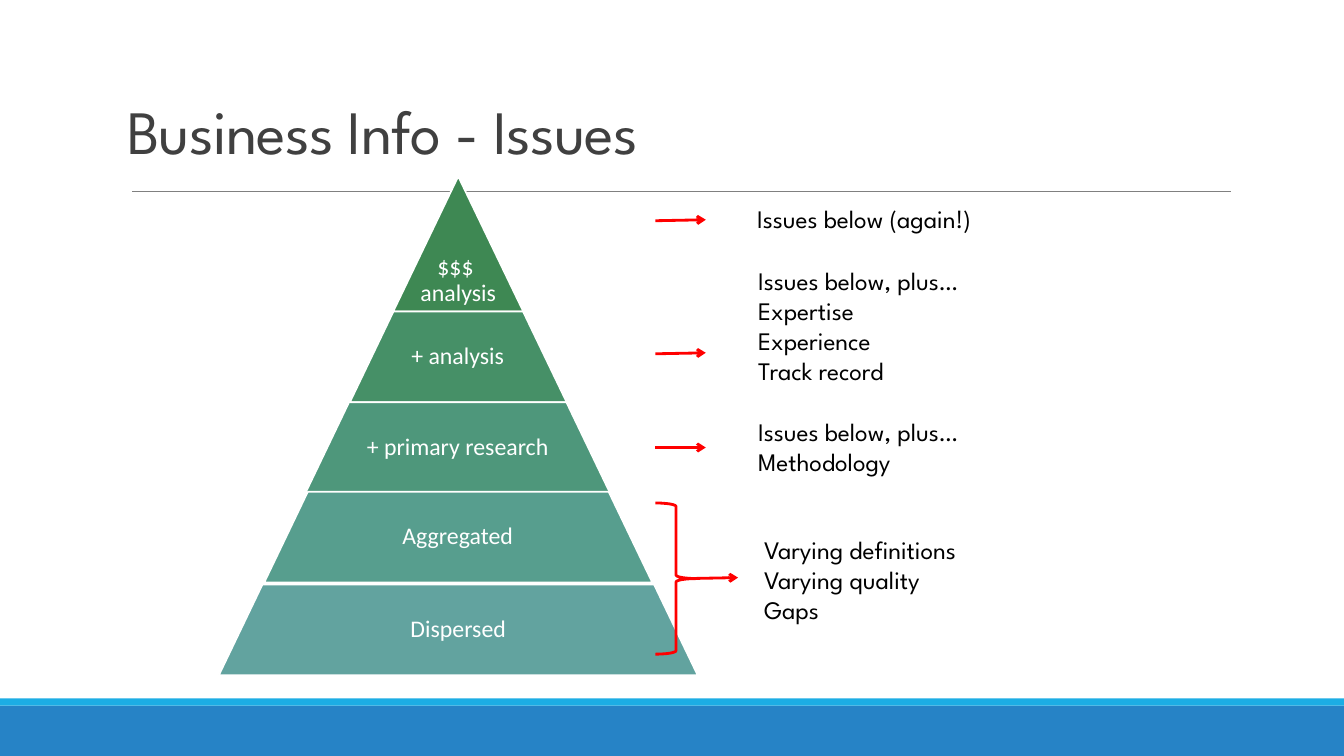
from lxml import etree
from pptx import Presentation
from pptx.dml.color import RGBColor
from pptx.enum.shapes import MSO_CONNECTOR, MSO_SHAPE as SHAPE
from pptx.enum.text import MSO_ANCHOR as ANCHOR, PP_ALIGN as ALIGN
from pptx.oxml.ns import qn
from pptx.util import Emu, Pt

PX = 9144  # 100 px to the inch
COLORS = {
    "bar": "2683C6", "strip": "1CADE4", "rule": "808080", "title": "404040",
    "white": "FFFFFF", "black": "000000", "red": "FF0000",
}
HEAD_FONT, TIER_FONT = "League Spartan", "Calibri"
CENTER = 454

# label, top, width, height, label width, adjustment, fill
TIERS = [
    ("$$$ \nanalysis", 175, 129, 134, 129, 0.5, "3E8853"),
    ("+ analysis", 309, 215, 90, 140, 0.48, "469067"),
    ("+ primary research", 399, 302, 90, 196, 0.48, "4E977B"),
    ("Aggregated", 488, 385, 90, 250, 0.48, "579E8E"),
    ("Dispersed", 580, 475, 90, 309, 0.48, "62A39F"),
]
# text box (left, top, width, height), arrow (x1, y1, x2, y2), lines
ISSUES = [
    ((741, 197, 308, 40), (650, 219, 700, 218), ["Issues below (again!)"]),
    ((742, 258, 350, 131), (650, 351, 700, 350),
     ["Issues below, plus…", "Expertise", "Experience", "Track record"]),
    ((742, 408, 350, 71), (650, 444, 700, 444),
     ["Issues below, plus…", "Methodology"]),
    ((748, 525, 360, 101), (683, 574, 732, 573),
     ["Varying definitions", "Varying quality", "Gaps"]),
]


def px(*lengths):
    return [Emu(n * PX) for n in lengths]


def add_line(x1, y1, x2, y2, color, width, arrow=False):
    cxn = s.shapes.add_connector(MSO_CONNECTOR.STRAIGHT, *px(x1, y1, x2, y2))
    cxn.line.color.rgb = RGBColor.from_string(COLORS[color])
    cxn.line.width = Pt(width)
    if arrow:
        etree.SubElement(cxn.line._get_or_add_ln(), qn("a:tailEnd"), type="arrow")
    etree.SubElement(cxn._element.spPr, qn("a:effectLst"))


prs = Presentation()
prs.slide_width, prs.slide_height = px(1333, 750)
s = prs.slides.add_slide(prs.slide_layouts[5])

# Title
title = s.shapes.title
title.left, title.top, title.width, title.height = px(116, 83, 908, 88)
tf = title.text_frame
tf.word_wrap = True
tf.vertical_anchor = ANCHOR.BOTTOM
p = tf.paragraphs[0]
p.alignment = ALIGN.LEFT
p.line_spacing = 0.85
r = p.add_run()
r.text = "Business Info - Issues"
r.font.name, r.font.size = HEAD_FONT, Pt(44)
r.font.color.rgb = RGBColor.from_string(COLORS["title"])
r.font._element.set("spc", "-50")

# Footer bars and title rule
for color, top, height in [("bar", 700, 50), ("strip", 693, 7)]:
    sp = s.shapes.add_shape(SHAPE.RECTANGLE, *px(0, top, 1333, height))
    sp.shadow.inherit = False
    sp.fill.solid()
    sp.fill.fore_color.rgb = RGBColor.from_string(COLORS[color])
    sp.line.fill.background()
add_line(131, 190, 1221, 190, "rule", 0.5)

# Pyramid
for label, top, width, height, label_width, adj, fill in TIERS:
    sp = s.shapes.add_shape(
        SHAPE.TRAPEZOID, *px(CENTER - width // 2, top, width, height))
    sp.adjustments[0] = adj
    sp.shadow.inherit = False
    sp.fill.solid()
    sp.fill.fore_color.rgb = RGBColor.from_string(fill)
    sp.line.color.rgb = RGBColor.from_string(COLORS["white"])
    sp.line.width = Pt(1.25)

    box = s.shapes.add_textbox(
        *px(CENTER - label_width // 2, top, label_width, height))
    tf = box.text_frame
    tf.word_wrap = True
    tf.margin_left, tf.margin_top, tf.margin_right, tf.margin_bottom = px(2, 2, 2, 2)
    tf.vertical_anchor = ANCHOR.MIDDLE
    if top == TIERS[0][1]:  # the tip is too narrow for centred text
        tf.vertical_anchor = ANCHOR.BOTTOM
        tf.margin_bottom = Emu(5 * PX)
    p = tf.paragraphs[0]
    p.alignment = ALIGN.CENTER
    p.line_spacing = 0.9
    for i, line in enumerate(label.split("\n")):
        if i:
            p.add_line_break()
        r = p.add_run()
        r.text = line
        r.font.name, r.font.size = TIER_FONT, Pt(17)
        r.font.color.rgb = RGBColor.from_string(COLORS["white"])

# Brace over the two lowest tiers
brace = s.shapes.add_shape(SHAPE.RIGHT_BRACE, *px(650, 499, 41, 150))
brace.shadow.inherit = False
brace.fill.background()
brace.line.color.rgb = RGBColor.from_string(COLORS["red"])
brace.line.width = Pt(2)

# Issues with their arrows
for frame, arrow, lines in ISSUES:
    add_line(*arrow, "red", 2, arrow=True)
    tf = s.shapes.add_textbox(*px(*frame)).text_frame
    tf.word_wrap = True
    for i, line in enumerate(lines):
        p = tf.add_paragraph() if i else tf.paragraphs[0]
        r = p.add_run()
        r.text = line
        r.font.name, r.font.size = HEAD_FONT, Pt(18)
        r.font.color.rgb = RGBColor.from_string(COLORS["black"])

prs.save("out.pptx")
